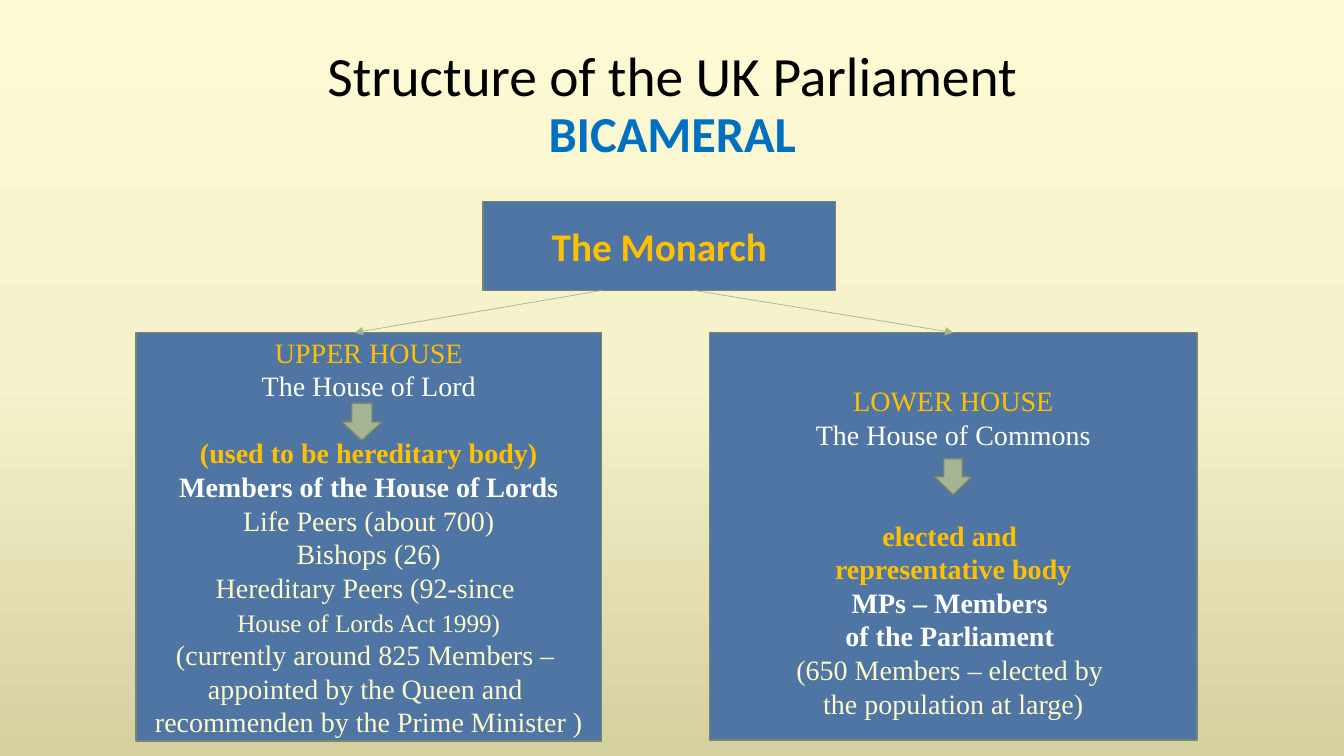
from copy import deepcopy

from lxml import etree
from pptx import Presentation
from pptx import util as u
from pptx.dml.color import RGBColor
from pptx.enum import shapes, text
from pptx.oxml import ns

COLORS = {
    "sky": "FDFAD3", "sand": "F6F2CB", "khaki": "D4D0A0",
    "box": "4E75A3", "border": "7A866C", "arrow": "A5B592",
    "black": "000000", "blue": "0070C0", "gold": "FFC000",
    "white": "FFFFFF", "cream": "FEFAC9",
}
SERIF, SANS = "Times New Roman", "Calibri"
LINE = 24

UPPER = [
    ("UPPER HOUSE", "gold", False, 20, 0),
    ("The House of Lord", "white", False, 20, 0),
    ("(used to be hereditary body)", "gold", True, 20, LINE),
    ("Members of the House of Lords", "white", True, 20, 0),
    ("Life Peers (about 700)", "cream", False, 20, 0),
    ("Bishops (26)", "cream", False, 20, 0),
    ("Hereditary Peers (92-since ", "cream", False, 20, 0),
    ("House of Lords Act 1999)", "cream", False, 18, 0),
    ("(currently around 825 Members – ", "cream", False, 20, 0),
    ("appointed by the Queen and ", "cream", False, 20, 0),
    ("recommenden by the Prime Minister )", "cream", False, 20, 0),
]
LOWER = [
    ("LOWER HOUSE", "gold", False, 20, 0),
    ("The House of Commons", "white", False, 20, 0),
    ("elected and ", "gold", True, 20, 2 * LINE),
    ("representative body", "gold", True, 20, 0),
    ("MPs – Members ", "white", True, 20, 0),
    ("of the Parliament ", "white", True, 20, 0),
    ("(650 Members – elected by ", "cream", False, 20, 0),
    ("the population at large)", "cream", False, 20, 0),
]


def rgb(name):
    return RGBColor.from_string(COLORS[name])


def cm(*values):
    return [u.Cm(v) for v in values]


def style(font, name, size, color, bold=False):
    font.name, font.size, font.bold = name, u.Pt(size), bold
    font.color.rgb = rgb(color)


def paint_background(s):
    fill = s.background.fill
    fill.gradient()
    fill.gradient_angle = 270
    first = next(s.background._cSld.iter(ns.qn("a:gs")))
    first.addnext(deepcopy(first))
    for stop, color, pos in zip(fill.gradient_stops, ("sky", "sand", "khaki"), (0, 0.5, 1)):
        stop.color.rgb = rgb(color)
        stop.position = pos


def add_title(s):
    tf = s.shapes.add_textbox(*cm(2.34, 1.02, 29.21, 3.3)).text_frame
    tf.word_wrap = True
    tf.vertical_anchor = text.MSO_ANCHOR.MIDDLE
    p = tf.paragraphs[0]
    p.alignment = text.PP_ALIGN.CENTER
    p.line_spacing = 0.9
    r = p.add_run()
    r.text = "Structure of the UK Parliament"
    style(r.font, SANS, 39.6, "black")
    p.add_line_break()
    r = p.add_run()
    r.text = "BICAMERAL"
    style(r.font, SANS, 36, "blue", True)


def add_block(s, kind, box, fill):
    sp = s.shapes.add_shape(kind, *cm(*box))
    sp.shadow.inherit = False
    sp.fill.solid()
    sp.fill.fore_color.rgb = rgb(fill)
    sp.line.color.rgb = rgb("border")
    sp.line.width = u.Pt(1)
    return sp


def add_box(s, box, lines, font=SERIF, spacing=LINE):
    sp = add_block(s, shapes.MSO_SHAPE.RECTANGLE, box, "box")
    tf = sp.text_frame
    tf.word_wrap = True
    tf.vertical_anchor = text.MSO_ANCHOR.MIDDLE
    for i, (line, color, bold, size, gap) in enumerate(lines):
        p = tf.add_paragraph() if i else tf.paragraphs[0]
        p.text = line
        p.alignment = text.PP_ALIGN.CENTER
        if spacing:
            p.line_spacing = u.Pt(spacing)
        if gap:
            p.space_before = u.Pt(gap)
        style(p.font, font, size, color, bold)
    return sp


def add_down_arrow(s, *box):
    add_block(s, shapes.MSO_SHAPE.DOWN_ARROW, box, "arrow")


def add_branch(s, *ends):
    c = s.shapes.add_connector(shapes.MSO_CONNECTOR.STRAIGHT, *cm(*ends))
    c.line.color.rgb = rgb("arrow")
    c.line.width = u.Pt(0.5)
    etree.SubElement(c.line._get_or_add_ln(), ns.qn("a:tailEnd"), type="triangle")
    etree.SubElement(c._element.spPr, ns.qn("a:effectLst"))
    return c


def main():
    prs = Presentation()
    prs.slide_width, prs.slide_height = cm(33.87, 19.05)
    s = prs.slides.add_slide(prs.slide_layouts[6])
    paint_background(s)
    add_title(s)
    add_box(s, (3.43, 8.38, 11.73, 10.29), UPPER)
    lower = add_box(s, (17.88, 8.38, 12.29, 10.27), LOWER)
    lower.text_frame.margin_top = u.Cm(0.9)
    add_down_arrow(s, 23.55, 11.56, 0.94, 0.91)
    add_down_arrow(s, 8.61, 10.16, 1.02, 0.94)
    add_box(s, (12.17, 5.08, 8.89, 2.24), [("The Monarch", "gold", True, 28, 0)], SANS, None)
    add_branch(s, 15.16, 7.32, 8.94, 8.38)
    add_branch(s, 17.5, 7.32, 24.03, 8.38).end_connect(lower, 0)
    prs.save("out.pptx")


if __name__ == "__main__":
    main()
